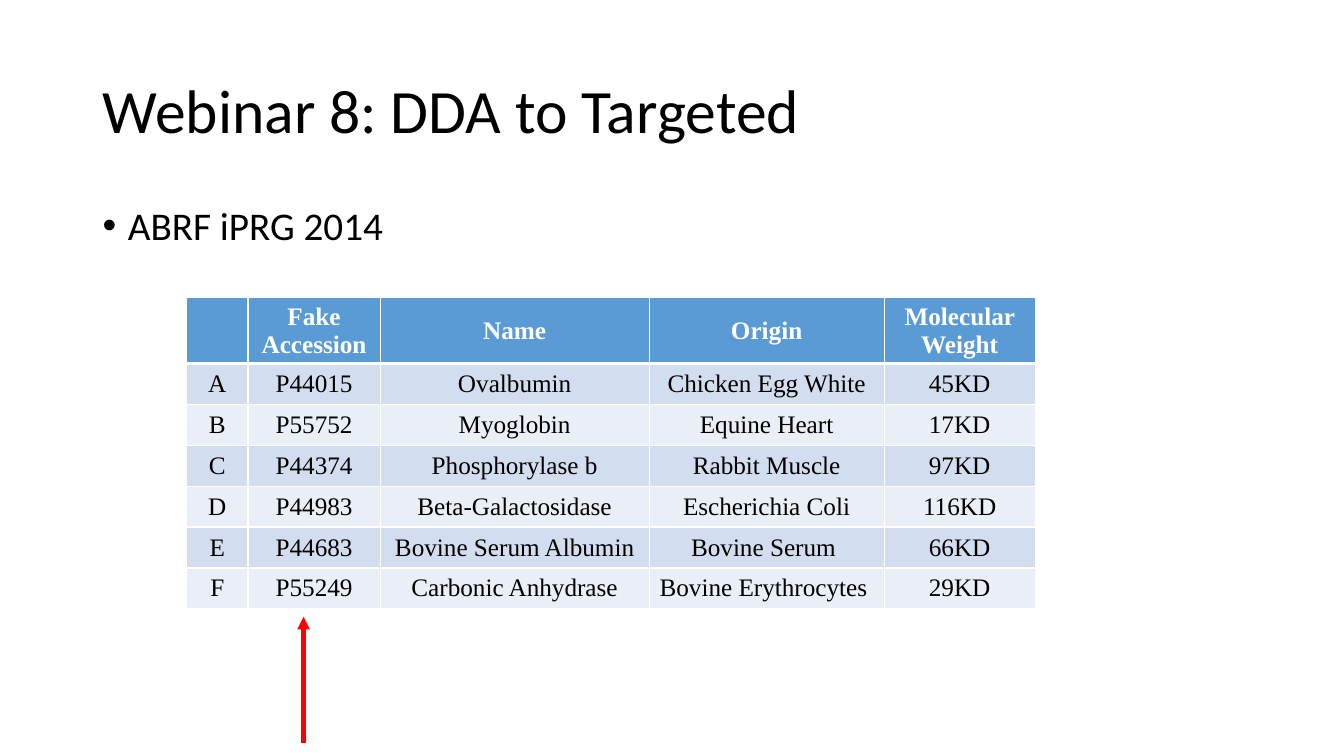
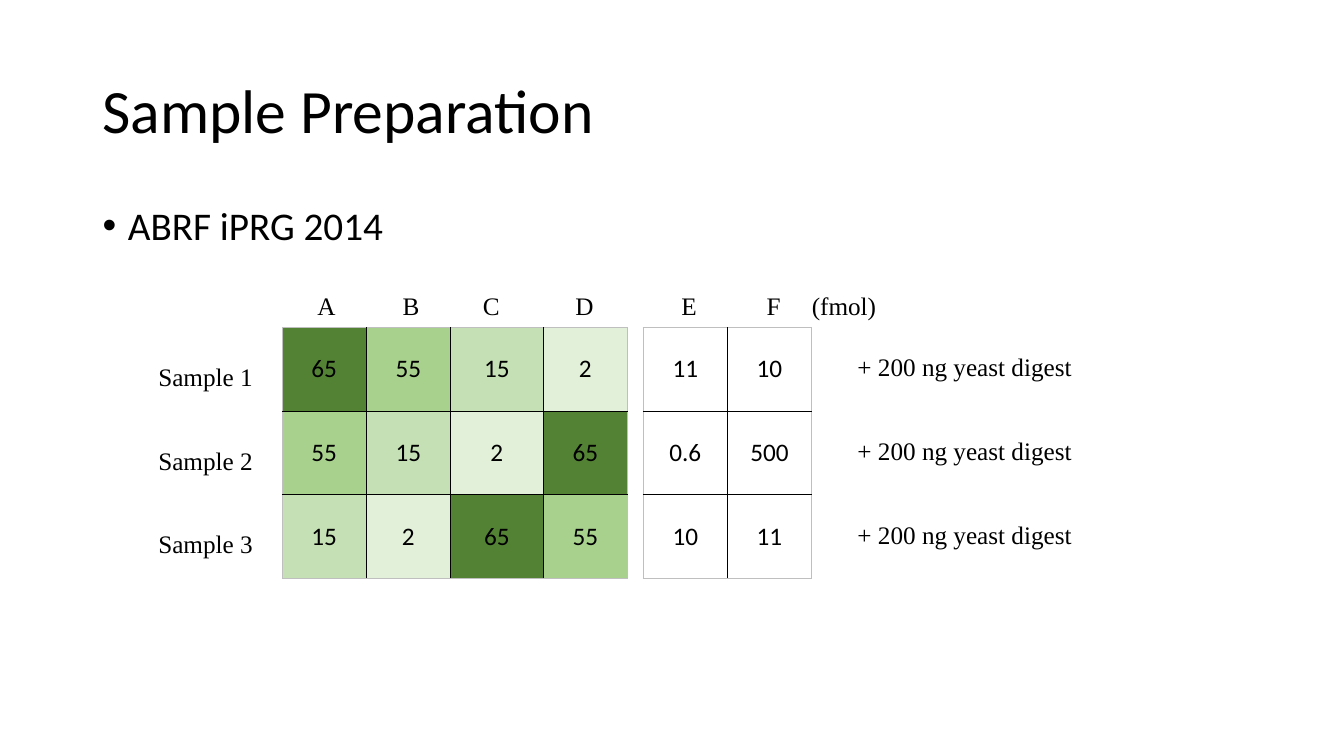
from lxml import etree
from pptx import Presentation
from pptx.dml.color import RGBColor
from pptx.enum.shapes import MSO_CONNECTOR
from pptx.enum.text import MSO_ANCHOR, PP_ALIGN
from pptx.oxml.ns import qn
from pptx.util import Cm, Pt

LEFT = PP_ALIGN.LEFT
CENTER = PP_ALIGN.CENTER
MIDDLE = MSO_ANCHOR.MIDDLE
STRAIGHT = MSO_CONNECTOR.STRAIGHT

BLACK = RGBColor(0x00, 0x00, 0x00)
WHITE = RGBColor(0xFF, 0xFF, 0xFF)
RED = RGBColor(0xFF, 0x00, 0x00)
GREY = RGBColor(0xBF, 0xBF, 0xBF)
BLUE = RGBColor(0x5B, 0x9B, 0xD5)
BLUE_BANDS = (RGBColor(0xD2, 0xDE, 0xEF), RGBColor(0xEA, 0xEF, 0xF7))
GREENS = {
    "65": RGBColor(0x54, 0x82, 0x35),
    "55": RGBColor(0xA9, 0xD1, 0x8E),
    "15": RGBColor(0xC5, 0xE0, 0xB4),
    "2": RGBColor(0xE2, 0xF0, 0xD9),
}

SANS = "Calibri"
SERIF = "Times New Roman"
TABLE_SIZE = 18

PROTEINS = [
    ("", "Fake Accession", "Name", "Origin", "Molecular Weight"),
    ("A", "P44015", "Ovalbumin", "Chicken Egg White", "45KD"),
    ("B", "P55752", "Myoglobin", "Equine Heart", "17KD"),
    ("C", "P44374", "Phosphorylase b", "Rabbit Muscle", "97KD"),
    ("D", "P44983", "Beta-Galactosidase", "Escherichia Coli", "116KD"),
    ("E", "P44683", "Bovine Serum Albumin", "Bovine Serum ", "66KD"),
    ("F", "P55249", "Carbonic Anhydrase", "Bovine Erythrocytes ", "29KD"),
]
PROTEIN_WIDTHS = (1.55, 3.33, 6.78, 5.92, 3.81)

ROTATED_AMOUNTS = [
    ("65", "55", "15", "2"),
    ("55", "15", "2", "65"),
    ("15", "2", "65", "55"),
]
SPIKED_AMOUNTS = [("11", "10"), ("0.6", "500"), ("10", "11")]
AMOUNT_WIDTHS = (2.12, 2.12, 2.34, 2.12)
AMOUNT_TOP = 8.25
AMOUNT_HEIGHT = 2.11
COLUMN_LABELS = ("A", "B", "C", "D", "E", "F", "(fmol)")
LABEL_STOPS = (2.15, 4.17, 6.5, 9.17, 11.32, 12.46)


def style_text(paragraph, name, size, color=BLACK, bold=False, align=LEFT):
    paragraph.alignment = align
    font = paragraph.font
    font.name = name
    font.size = Pt(size)
    font.bold = bold
    font.color.rgb = color


def place(shape, left, top, width, height):
    shape.left, shape.top = Cm(left), Cm(top)
    shape.width, shape.height = Cm(width), Cm(height)


def add_page(deck, title, bullet):
    page = deck.slides.add_slide(deck.slide_layouts[1])
    heading = page.shapes.title
    place(heading, 2.33, 1.01, 29.21, 3.68)
    heading.text_frame.vertical_anchor = MIDDLE
    body = page.placeholders[1]
    place(body, 2.33, 5.07, 29.21, 12.1)
    for box, text, size in ((heading, title, 44), (body, bullet, 28)):
        box.text_frame.text = text
        para = box.text_frame.paragraphs[0]
        para.line_spacing = 0.9
        style_text(para, SANS, size)
    para.space_before = Pt(10)
    properties = para._p.get_or_add_pPr()
    properties.set("marL", str(Cm(0.64)))
    properties.set("indent", str(-Cm(0.64)))
    return page


def set_borders(cell, borders):
    properties = cell._tc.get_or_add_tcPr()
    for side, (color, width) in zip("LRTB", borders):
        line = etree.SubElement(properties, qn(f"a:ln{side}"), w=str(Pt(width)))
        fill = etree.SubElement(line, qn("a:solidFill"))
        etree.SubElement(fill, qn("a:srgbClr"), val=str(color))


def add_grid(page, left, top, widths, heights, rows, font_name, style_cell):
    frame = page.shapes.add_table(
        len(rows), len(widths), Cm(left), Cm(top), Cm(sum(widths)), Cm(sum(heights))
    )
    table = frame.table
    table.first_row = False
    table.horz_banding = False
    for column, width in zip(table.columns, widths):
        column.width = Cm(width)
    for row, height in zip(table.rows, heights):
        row.height = Cm(height)
    for r, values in enumerate(rows):
        for c, value in enumerate(values):
            cell = table.cell(r, c)
            fill, color, bold, borders = style_cell(r, c, value)
            set_borders(cell, borders)
            cell.fill.solid()
            cell.fill.fore_color.rgb = fill
            cell.vertical_anchor = MIDDLE
            cell.text = value
            style_text(
                cell.text_frame.paragraphs[0], font_name, TABLE_SIZE, color, bold, CENTER
            )


def protein_style(row, column, value):
    thin, thick = (WHITE, 1), (WHITE, 3)
    top = thick if row == 1 else thin
    if row == 0:
        return BLUE, WHITE, True, (thin, thin, thin, thick)
    return BLUE_BANDS[(row - 1) % 2], BLACK, False, (thin, thin, top, thin)


def add_amounts(page, left, rows, fills):
    widths = AMOUNT_WIDTHS[:len(rows[0])]

    def amount_style(row, column, value):
        outer = (
            column == 0,
            column == len(widths) - 1,
            row == 0,
            row == len(rows) - 1,
        )
        borders = [(GREY, 0.5) if edge else (BLACK, 1) for edge in outer]
        return fills.get(value, WHITE), BLACK, False, borders

    heights = [AMOUNT_HEIGHT] * len(rows)
    add_grid(page, left, AMOUNT_TOP, widths, heights, rows, SANS, amount_style)


def add_label(page, text, left, top, width, wrap=False):
    box = page.shapes.add_textbox(Cm(left), Cm(top), Cm(width), Cm(1.02))
    box.text_frame.word_wrap = wrap
    para = box.text_frame.paragraphs[0]
    para.text = text
    style_text(para, SERIF, TABLE_SIZE)
    return para


def add_tab_stops(paragraph, stops):
    tabs = etree.Element(qn("a:tabLst"))
    for stop in stops:
        etree.SubElement(tabs, qn("a:tab"), pos=str(Cm(stop)), algn="l")
    paragraph._p.get_or_add_pPr().insert(0, tabs)


def add_arrow(page, start, end, color, width):
    arrow = page.shapes.add_connector(STRAIGHT, *map(Cm, start + end))
    arrow.line.color.rgb = color
    arrow.line.width = Pt(width)
    etree.SubElement(arrow.line._get_or_add_ln(), qn("a:tailEnd"), type="triangle")
    etree.SubElement(arrow._element.spPr, qn("a:effectLst"))


def build_webinar(deck):
    page = add_page(deck, "Webinar 8: DDA to Targeted", "ABRF iPRG 2014")
    heights = [1.65] + [1.03] * (len(PROTEINS) - 1)
    add_grid(page, 4.7, 7.5, PROTEIN_WIDTHS, heights, PROTEINS, SERIF, protein_style)
    add_arrow(page, (7.65, 18.72), (7.65, 15.54), RED, 3)


def build_preparation(deck):
    page = add_page(deck, "Sample Preparation", "ABRF iPRG 2014")
    add_amounts(page, 7.11, ROTATED_AMOUNTS, GREENS)
    add_amounts(page, 16.21, SPIKED_AMOUNTS, {})
    header = add_label(page, "\t".join(COLUMN_LABELS), 7.75, 7.19, 18.62, wrap=True)
    add_tab_stops(header, LABEL_STOPS)
    for index in range(len(ROTATED_AMOUNTS)):
        offset = index * AMOUNT_HEIGHT
        add_label(page, f"Sample {index + 1}", 3.74, 8.98 + offset, 2.9)
        add_label(page, "+ 200 ng yeast digest", 21.36, 8.74 + offset, 6.25)


def main():
    deck = Presentation()
    deck.slide_width, deck.slide_height = Cm(33.87), Cm(19.05)
    build_webinar(deck)
    build_preparation(deck)
    deck.save("out.pptx")


if __name__ == "__main__":
    main()
